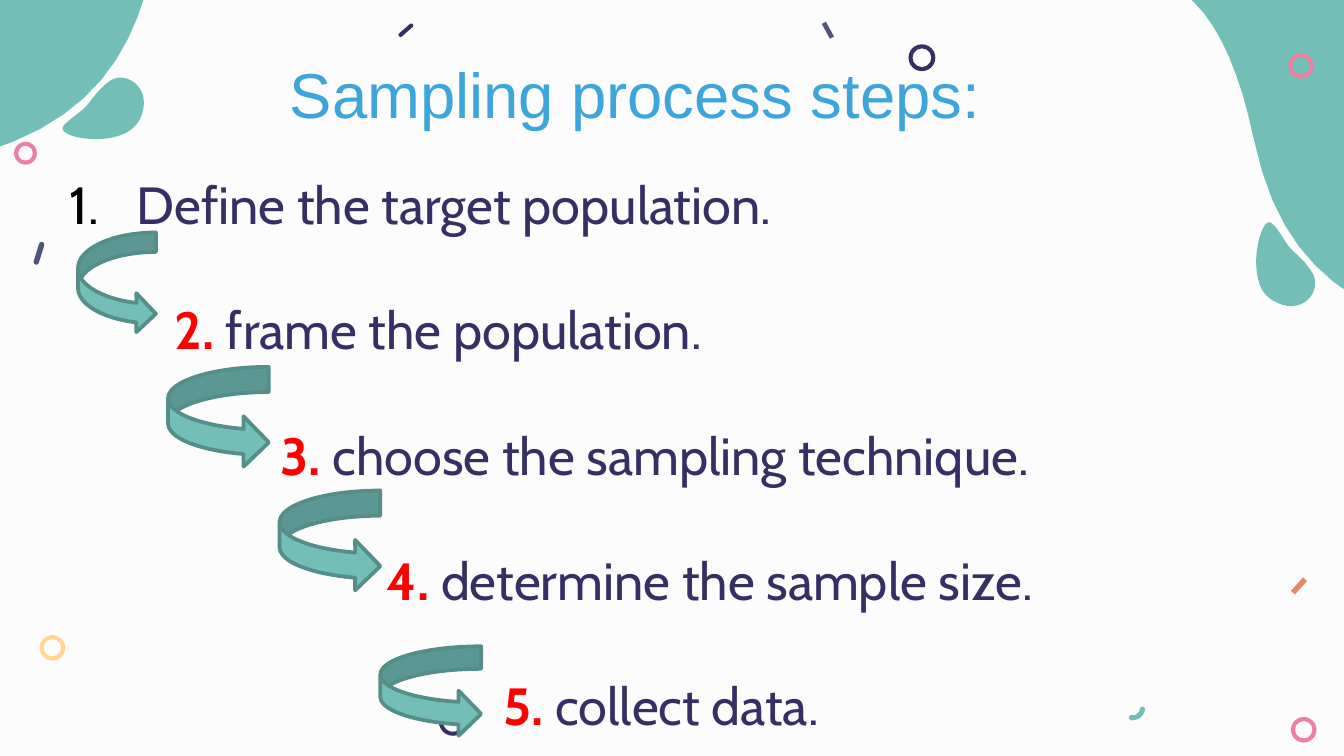
from pptx import Presentation
from pptx.dml.color import RGBColor
from pptx.enum.shapes import MSO_CONNECTOR, MSO_SHAPE
from pptx.enum.text import MSO_ANCHOR, PP_ALIGN
from pptx.oxml.ns import qn
from pptx.util import Inches, Pt
from lxml.etree import SubElement

PAPER = RGBColor(0xFC, 0xFC, 0xFC)
TEAL = RGBColor(0x73, 0xBF, 0xB8)
DARK_TEAL = RGBColor(0x55, 0x8D, 0x88)
PINK = RGBColor(0xEC, 0x80, 0xA2)
NAVY = RGBColor(0x34, 0x30, 0x63)
SLATE = RGBColor(0x51, 0x54, 0x7A)
YELLOW = RGBColor(0xFF, 0xD7, 0x90)
ORANGE = RGBColor(0xE8, 0x88, 0x6A)
BLUE = RGBColor(0x3D, 0xA5, 0xD9)
RED = RGBColor(0xFF, 0x00, 0x00)

TITLE = "Sampling process steps:"
# number (None: automatic), wording, left indent
STEPS = [
    (None, "Define the target population.", 0.5),
    ("2. ", "frame the population.", 0.78),
    ("3. ", "choose the sampling technique.", 1.57),
    ("4. ", "determine the sample size.", 2.36),
    ("5. ", "collect data.", 3.23),
]
# left, top, width, height, adjustments
ARROWS = [
    (2.08, 3.65, 0.75, 0.75, None),
    (1.25, 2.73, 0.75, 0.75, (0.25, 0.583, 0.25)),
    (2.83, 4.81, 0.75, 0.67, None),
    (0.58, 1.73, 0.58, 0.75, None),
]
# Each outline: start point, then a point (2 numbers) or a curve (6 numbers)
BLOBS = [
    [(8.05, -0.15), (8.76, -0.35, 9.13, 0.09, 9.33, 1.04),
     (9.61, 2.39, 10.59, 2.45, 11.89, 2.77),
     (12.86, 3, 12.78, 3.92, 12.78, 3.92), (14.17, -1.28), (8.74, -2.74)],
    [(9.46, 1.66), (9.38, 1.59, 9.25, 2.1, 9.46, 2.23),
     (9.68, 2.37, 9.84, 2.17, 9.77, 2.04), (9.7, 1.92, 9.63, 1.89, 9.58, 1.82),
     (9.53, 1.75, 9.51, 1.7, 9.46, 1.66)],
    [(-1.2, 2.53), (-1.47, 1.84, -1.06, 1.43, -0.14, 1.14),
     (1.19, 0.73, 1.15, -0.26, 1.33, -1.58),
     (1.47, -2.56, 2.4, -2.58, 2.4, -2.58), (-2.92, -3.46), (-3.84, 2.09)],
    [(0.47, 0.94), (0.41, 1.03, 0.92, 1.12, 1.04, 0.89),
     (1.15, 0.66, 0.94, 0.52, 0.82, 0.6), (0.71, 0.68, 0.68, 0.76, 0.61, 0.82),
     (0.55, 0.87, 0.5, 0.9, 0.47, 0.94)],
    [(8.5, 5.26), (8.49, 5.26, 8.48, 5.27, 8.48, 5.28),
     (8.48, 5.3, 8.45, 5.33, 8.42, 5.32), (8.41, 5.32, 8.4, 5.33, 8.4, 5.34),
     (8.4, 5.35, 8.41, 5.36, 8.42, 5.36), (8.47, 5.36, 8.51, 5.33, 8.52, 5.28),
     (8.52, 5.27, 8.51, 5.26, 8.5, 5.26)],
]
UNITS_PER_INCH = 1000  # outline points are rounded to whole units
# centre x, centre y, diameter, colour
RINGS = [
    (0.19, 1.14, 0.17, PINK), (9.68, 0.49, 0.19, PINK),
    (6.86, 0.43, 0.2, NAVY), (3.37, 5.37, 0.21, NAVY),
    (0.39, 4.82, 0.19, YELLOW), (9.7, 5.43, 0.19, PINK),
]
RING_THICKNESS = 0.03
# from x, from y, to x, to y, width, cap, colour
DASHES = [
    (0.31, 1.82, 0.27, 1.95, 2.9, "rnd", SLATE),
    (6.13, 0.17, 6.19, 0.28, 2.5, "flat", SLATE),
    (9.71, 4.31, 9.62, 4.41, 2.9, "flat", ORANGE),
    (3.06, 0.19, 2.98, 0.26, 2.2, "rnd", NAVY),
]


def paint(shape, fill, line=None, width=2):
    shape.shadow.inherit = False
    shape.fill.solid()
    shape.fill.fore_color.rgb = fill
    if line is None:
        shape.line.fill.background()
    else:
        shape.line.color.rgb = line
        shape.line.width = Pt(width)


def flatten(outline, steps=16):
    """Turn an outline with Bezier curves into a list of points."""
    points = [outline[0]]
    for part in outline[1:]:
        if len(part) == 2:
            points.append(part)
            continue
        corners = [points[-1], part[:2], part[2:4], part[4:]]
        for step in range(1, steps + 1):
            t = step / steps
            weights = ((1 - t) ** 3, 3 * t * (1 - t) ** 2, 3 * t * t * (1 - t), t ** 3)
            points.append(tuple(
                sum(w * corner[axis] for w, corner in zip(weights, corners))
                for axis in (0, 1)))
    return points


def add_blob(page, outline):
    points = [(round(x * UNITS_PER_INCH), round(y * UNITS_PER_INCH))
              for x, y in flatten(outline)]
    builder = page.shapes.build_freeform(*points[0], scale=Inches(1) / UNITS_PER_INCH)
    builder.add_line_segments(points[1:], close=True)
    paint(builder.convert_to_shape(), TEAL)


def add_ring(page, x, y, size, color):
    ring = page.shapes.add_shape(
        MSO_SHAPE.DONUT, Inches(x - size / 2), Inches(y - size / 2),
        Inches(size), Inches(size))
    ring.adjustments[0] = RING_THICKNESS / size
    paint(ring, color)


def add_dash(page, x1, y1, x2, y2, width, cap, color):
    dash = page.shapes.add_connector(
        MSO_CONNECTOR.STRAIGHT, Inches(x1), Inches(y1), Inches(x2), Inches(y2))
    dash.line.color.rgb = color
    dash.line.width = Pt(width)
    properties = dash._element.spPr
    properties.find(qn("a:ln")).set("cap", cap)
    SubElement(properties, qn("a:effectLst"))


def add_box(page, left, top, width, height):
    box = page.shapes.add_textbox(Inches(left), Inches(top), Inches(width), Inches(height))
    box.text_frame.word_wrap = True
    box.text_frame.vertical_anchor = MSO_ANCHOR.TOP
    return box.text_frame


def add_span(para, text, font="Cabin", size=28, color=NAVY, bold=False):
    span = para.add_run()
    span.text = text
    span.font.name = font
    span.font.size = Pt(size)
    span.font.color.rgb = color
    span.font.bold = bold


def add_auto_number(para, hanging):
    properties = para._p.get_or_add_pPr()
    properties.set("indent", str(-Inches(hanging)))
    color = SubElement(properties, qn("a:buClr"))
    SubElement(color, qn("a:srgbClr")).set("val", "000000")
    SubElement(properties, qn("a:buFont")).set("typeface", "Cabin")
    SubElement(properties, qn("a:buAutoNum")).set("type", "arabicPeriod")


def add_steps(page):
    frame = add_box(page, 0.42, 1.23, 9.25, 4.39)
    for index, (number, wording, indent) in enumerate(STEPS):
        para = frame.paragraphs[0] if index == 0 else frame.add_paragraph()
        para._p.get_or_add_pPr().set("marL", str(Inches(indent)))
        if number is None:
            add_auto_number(para, indent)
        else:
            para.space_before = Pt(33.6)
            add_span(para, number, color=RED, bold=True)
        add_span(para, wording)


def main():
    deck = Presentation()
    deck.slide_width = Inches(10)
    deck.slide_height = deck.slide_width * 9 // 16
    page = deck.slides.add_slide(deck.slide_layouts[6])
    page.background.fill.solid()
    page.background.fill.fore_color.rgb = PAPER

    for outline in BLOBS:
        add_blob(page, outline)
    for ring in RINGS:
        add_ring(page, *ring)
    for dash in DASHES:
        add_dash(page, *dash)

    title = add_box(page, 0.5, 0.31, 8.45, 0.63)
    title.margin_top = Inches(0.1)
    title.paragraphs[0].alignment = PP_ALIGN.CENTER
    add_span(title.paragraphs[0], TITLE, font="Arial", size=34, color=BLUE)
    add_steps(page)

    for *place, adjustments in ARROWS:
        arrow = page.shapes.add_shape(MSO_SHAPE.CURVED_RIGHT_ARROW, *map(Inches, place))
        for index, value in enumerate(adjustments or ()):
            arrow.adjustments[index] = value
        paint(arrow, TEAL, line=DARK_TEAL)
    deck.save("out.pptx")


if __name__ == "__main__":
    main()
